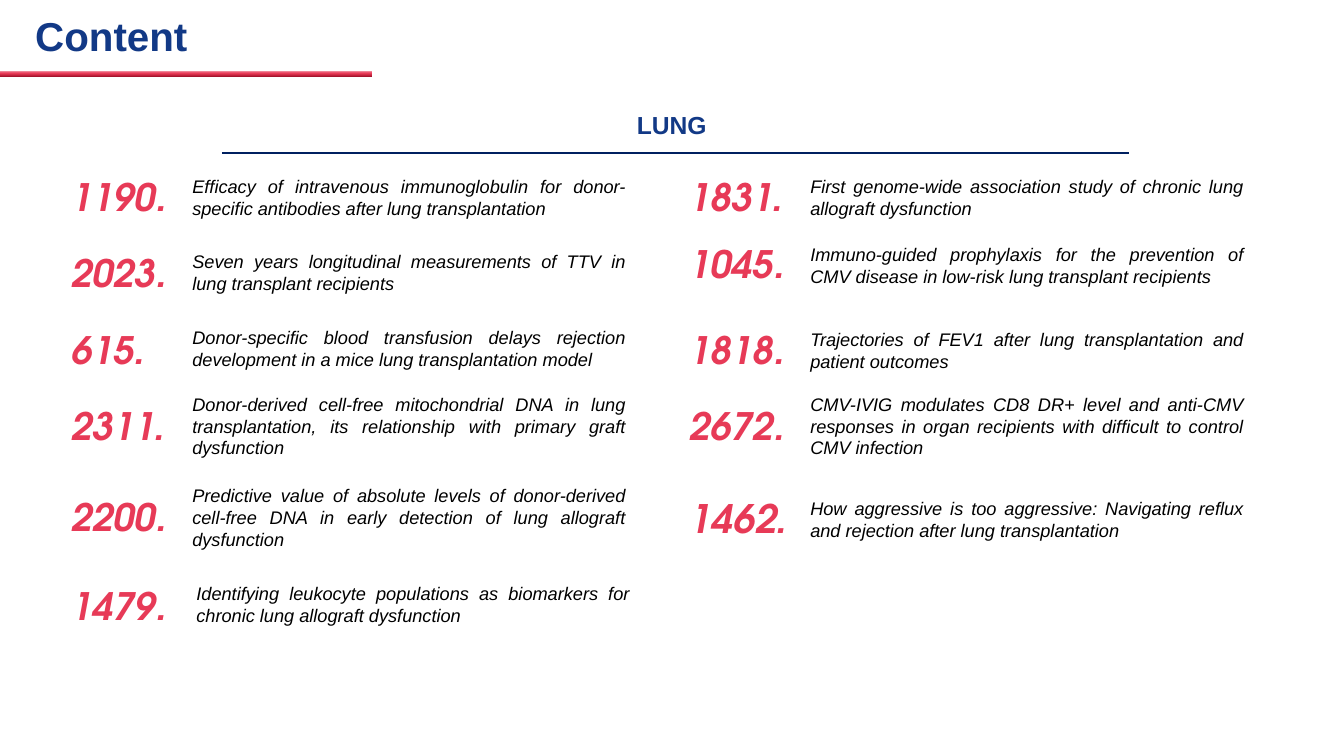
from copy import deepcopy
from pptx import Presentation
from pptx.dml.color import RGBColor
from pptx.enum.shapes import MSO_CONNECTOR, MSO_SHAPE
from pptx.enum.text import MSO_ANCHOR, MSO_AUTO_SIZE, PP_ALIGN
from pptx.oxml.ns import qn
from pptx.util import Pt

# Content: number, its top, text, its top, lines of text
LEFT = [
    ("1190", 120.2, "Efficacy of intravenous immunoglobulin for donor-specific antibodies after lung transplantation", 121.7, 2),
    ("2023", 175, "Seven years longitudinal measurements of TTV in lung transplant recipients", 175, 2),
    ("615", 229.7, "Donor-specific blood transfusion delays rejection development in a mice lung transplantation model", 229.7, 2),
    ("2311", 284.4, "Donor-derived cell-free mitochondrial DNA in lung transplantation, its relationship with primary graft dysfunction", 277.2, 3),
    ("2200", 349.2, "Predictive value of absolute levels of donor-derived cell-free DNA in early detection of lung allograft dysfunction", 342.7, 3),
    ("1479", 412.6, "Identifying leukocyte populations as biomarkers for chronic lung allograft dysfunction", 412.6, 2),
]
RIGHT = [
    ("1831", 120.2, "First genome-wide association study of chronic lung allograft dysfunction", 121.7, 2),
    ("1045", 168.5, "Immuno-guided prophylaxis for the prevention of CMV disease in low-risk lung transplant recipients", 170, 2),
    ("1818", 229.7, "Trajectories of FEV1 after lung transplantation and patient outcomes", 231.1, 2),
    ("2672", 284.4, "CMV-IVIG modulates CD8 DR+ level and anti-CMV responses in organ recipients with difficult to control CMV infection", 277.2, 3),
    ("1462", 349.2, "How aggressive is too aggressive: Navigating reflux and rejection after lung transplantation", 351.4, 2),
]
SHIFT = {"1479": 2.9}  # text set a little further right
LARGE = {"1462": 28}  # number set a little larger
BAR = [(0, "A7142D"), (0.48, "E73855"), (1, "F08496")]
NAVY, RED, BLACK = "123986", "E73A57", "000000"
BODY, DIGIT = "Arial", "TeX Gyre Adventor"

deck = Presentation()
deck.slide_width, deck.slide_height = Pt(960), Pt(540)
slide = deck.slides.add_slide(deck.slide_layouts[6])


def color(code):
    return RGBColor.from_string(code)


def add_box(x, y, w, h, align):
    box = slide.shapes.add_textbox(Pt(x), Pt(y), Pt(w), Pt(h))
    frame = box.text_frame
    frame.word_wrap = True
    frame.paragraphs[0].alignment = align
    return frame


def add_run(frame, text, size, face, code, bold=False, slant=False):
    run = frame.paragraphs[0].add_run()
    run.text = text
    font = run.font
    font.size, font.name = Pt(size), face
    font.bold, font.italic = bold, slant
    font.color.rgb = color(code)


def add_head(text, x, y, w, size, align):
    frame = add_box(x, y, w, 31.7, align)
    frame.margin_left = frame.margin_right = 0
    frame.margin_top = frame.margin_bottom = 0
    frame.vertical_anchor = MSO_ANCHOR.MIDDLE
    frame.paragraphs[0].line_spacing = 0.9
    add_run(frame, text, size, BODY, NAVY, bold=True)


# Title and gradient bar
add_head("Content", 25.2, 11.5, 828, 28.8, PP_ALIGN.LEFT)
bar = slide.shapes.add_shape(MSO_SHAPE.RECTANGLE, 0, Pt(50.4), Pt(265.7), Pt(4.3))
bar.shadow.inherit = False
bar.line.fill.background()
bar.fill.gradient()
bar.fill.gradient_angle = 90
stops = next(bar._element.iter(qn("a:gsLst")))
stops.append(deepcopy(stops[-1]))
for stop, (place, code) in zip(bar.fill.gradient_stops, BAR):
    stop.position = place
    stop.color.rgb = color(code)

# Section heading with its rule
add_head("LUNG", 152.6, 74.2, 654.5, 17.6, PP_ALIGN.CENTER)
rule = slide.shapes.add_connector(
    MSO_CONNECTOR.STRAIGHT, Pt(158.4), Pt(109.4), Pt(806.4), Pt(109.4))
rule.line.color.rgb = color("002060")
rule.line.width = Pt(1)
props = rule._element.spPr
props.append(props.makeelement(qn("a:effectLst"), {}))

# Two columns of numbered entries
for col, items in enumerate((LEFT, RIGHT)):
    x = 43.9 + col * 441.4
    for num, top, text, y, lines in items:
        frame = add_box(x, top, 102.2, 40.3, PP_ALIGN.LEFT)
        frame.auto_size = MSO_AUTO_SIZE.SHAPE_TO_FIT_TEXT
        add_run(frame, num, LARGE.get(num, 27), DIGIT, RED, True, True)
        add_run(frame, ".", 27, DIGIT, RED, True, True)
        frame = add_box(x + 86.4 + SHIFT.get(num, 0), y, 323.3,
                        7.2 + 15.8 * lines, PP_ALIGN.JUSTIFY)
        frame.auto_size = MSO_AUTO_SIZE.SHAPE_TO_FIT_TEXT
        add_run(frame, text, 13, BODY, BLACK, slant=True)

deck.save("out.pptx")
